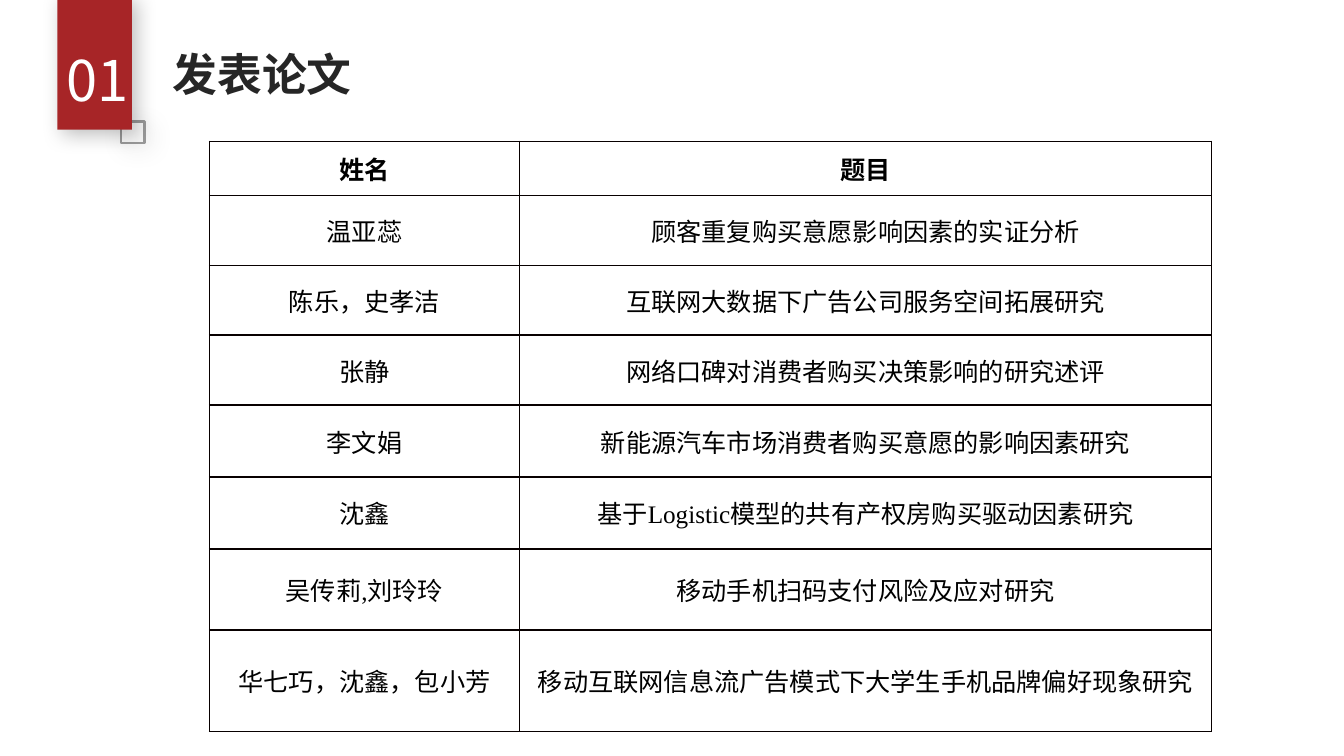
from lxml.etree import SubElement
from pptx import Presentation
from pptx.dml.color import RGBColor
from pptx.enum.shapes import MSO_SHAPE as Shape
from pptx.enum.text import MSO_ANCHOR as Anchor, PP_ALIGN as Align
from pptx.oxml.ns import qn
from pptx.util import Pt

COLORS = {"paper": "FFFFFF", "red": "A72527", "gray": "999999",
          "title": "262626", "ink": "000000", "border": "080000"}
SANS, SERIF = "Noto Sans CJK SC", "Times New Roman"

PAPERS = [
    ("姓名", "题目"),
    ("温亚蕊", "顾客重复购买意愿影响因素的实证分析"),
    ("陈乐，史孝洁", "互联网大数据下广告公司服务空间拓展研究"),
    ("张静", "网络口碑对消费者购买决策影响的研究述评"),
    ("李文娟", "新能源汽车市场消费者购买意愿的影响因素研究"),
    ("沈鑫", ["基于", "Logistic", "模型的共有产权房购买驱动因素研究"]),
    (["吴传莉", ",", "刘玲玲"], "移动手机扫码支付风险及应对研究"),
    ("华七巧，沈鑫，包小芳", "移动互联网信息流广告模式下大学生手机品牌偏好现象研究"),
]
COLUMN_WIDTHS = [221.4, 494.4]
ROW_HEIGHTS = [38.6, 50, 50, 50, 51.4, 51.4, 57.9, 72.6]


def rgb(name):
    return RGBColor.from_string(COLORS[name])


def add_span(para, text, color, font=SANS, **formats):
    span = para.add_run()
    span.text = text
    span.font.color.rgb = rgb(color)
    for name, value in {"name": font, **formats}.items():
        setattr(span.font, name, value)
    east_asian = SubElement(span.font._element, qn("a:ea"))
    east_asian.set("typeface", SANS)


def place(shape, left, top, width, height):
    shape.left, shape.top = Pt(left), Pt(top)
    shape.width, shape.height = Pt(width), Pt(height)


def set_frame(frame, wrap, align):
    formats = {"word_wrap": wrap, "vertical_anchor": Anchor.MIDDLE,
               "margin_left": Pt(7.2), "margin_right": Pt(7.2),
               "margin_top": Pt(3.6), "margin_bottom": Pt(3.6)}
    for name, value in formats.items():
        setattr(frame, name, value)
    para = frame.paragraphs[0]
    para.alignment = align
    return para


def add_shadow(shape):
    """Give the shape a soft shadow towards the lower right."""
    shape.shadow.inherit = False
    effects = shape._element.spPr.find(qn("a:effectLst"))
    shadow = SubElement(effects, qn("a:outerShdw"), blurRad=str(Pt(15)),
                        dist=str(Pt(5)), dir="2700000", algn="tl",
                        rotWithShape="0")
    color = SubElement(shadow, qn("a:srgbClr"), val=COLORS["ink"])
    SubElement(color, qn("a:alpha"), val="25000")


def add_badge(page, left, top, width, height, number):
    """Draw the red section tab, the small square at its corner and the number."""
    square = page.shapes.add_shape(Shape.RECTANGLE, Pt(left + width - 7.9),
                                   Pt(top + height - 5.8), Pt(16.8), Pt(15.2))
    square.fill.background()
    square.line.color.rgb = rgb("gray")
    square.line.width = Pt(1.5)
    tab = page.shapes.add_shape(Shape.RECTANGLE, Pt(left), Pt(top),
                                Pt(width), Pt(height))
    tab.fill.solid()
    tab.fill.fore_color.rgb = rgb("red")
    tab.line.fill.background()
    for shape in (square, tab):
        add_shadow(shape)
    label = page.shapes.add_textbox(Pt(left - 8), Pt(top + 31.7), Pt(72.7), Pt(55.4))
    para = set_frame(label.text_frame, True, Align.CENTER)
    add_span(para, number, "paper", size=Pt(40))


def add_title(page, left, top, width, height, text):
    title = page.shapes.title
    place(title, left, top, width, height)
    para = set_frame(title.text_frame, False, Align.LEFT)
    add_span(para, text, "title", size=Pt(32), bold=True)


def add_borders(cell):
    properties = cell._tc.get_or_add_tcPr()
    for position, side in enumerate(("lnL", "lnR", "lnT", "lnB")):
        line = SubElement(properties, qn(f"a:{side}"), w=str(Pt(1)))
        fill = SubElement(line, qn("a:solidFill"))
        SubElement(fill, qn("a:srgbClr"), val=COLORS["border"])
        properties.insert(position, line)


def fill_cell(cell, content, header):
    cell.fill.background()
    add_borders(cell)
    cell.vertical_anchor = Anchor.MIDDLE
    cell.margin_left = cell.margin_right = Pt(5)
    cell.margin_top = cell.margin_bottom = 0
    para = cell.text_frame.paragraphs[0]
    para.alignment = Align.CENTER
    for text in [content] if isinstance(content, str) else content:
        font = SERIF if header or text.isascii() else SANS
        add_span(para, text, "ink", font, size=Pt(18), bold=header)


def add_papers(page, left, top):
    table = page.shapes.add_table(len(PAPERS), len(COLUMN_WIDTHS), Pt(left), Pt(top),
                                  Pt(sum(COLUMN_WIDTHS)), Pt(sum(ROW_HEIGHTS))).table
    table.first_row = table.horz_banding = False
    for column, width in zip(table.columns, COLUMN_WIDTHS):
        column.width = Pt(width)
    for index, (row, height) in enumerate(zip(table.rows, ROW_HEIGHTS)):
        row.height = Pt(height)
        for cell, content in zip(row.cells, PAPERS[index]):
            fill_cell(cell, content, header=index == 0)


def main():
    deck = Presentation()
    deck.slide_width, deck.slide_height = Pt(960), Pt(540)
    page = deck.slides.add_slide(deck.slide_layouts[5])
    page.background.fill.solid()
    page.background.fill.fore_color.rgb = rgb("paper")
    add_badge(page, 41, -3, 53.3, 95.6, "01")
    add_title(page, 116, 29.5, 144, 46, "发表论文")
    add_papers(page, 149.6, 100.8)
    deck.save("out.pptx")


if __name__ == "__main__":
    main()
